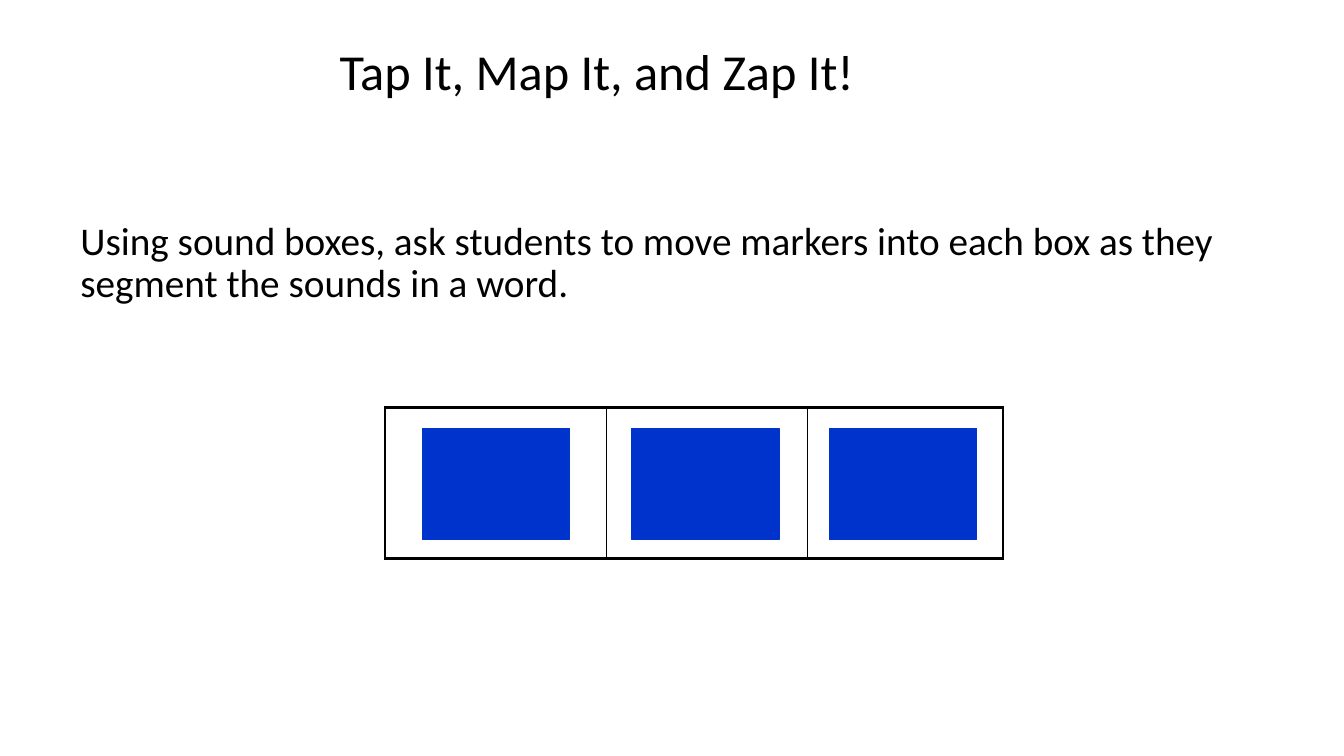
from dataclasses import dataclass

from lxml.etree import SubElement
from pptx import Presentation
from pptx.dml.color import RGBColor
from pptx.enum.shapes import MSO_SHAPE as Shape
from pptx.enum.text import MSO_ANCHOR as Anchor, MSO_AUTO_SIZE as AutoSize, PP_ALIGN as Align
from pptx.oxml.ns import qn
from pptx.slide import Slide
from pptx.util import Pt


@dataclass(frozen=True)
class Theme:
    font: str = "Calibri"
    ink: str = "000000"
    marker: str = "0033CC"
    title_size: float = 36
    body_size: float = 28
    outer_border: float = 2.25
    inner_border: float = 1
    marker_border: float = 0.75


@dataclass
class SlideBuilder:
    slide: Slide
    theme: Theme

    def format_text(self, shape, text, size, space_after=0, indent=0):
        frame = shape.text_frame
        frame_format = {"word_wrap": True, "auto_size": AutoSize.NONE, "vertical_anchor": Anchor.TOP}
        for name, value in frame_format.items():
            setattr(frame, name, value)
        paragraph = frame.paragraphs[0]
        paragraph_format = {
            "text": text,
            "alignment": Align.LEFT,
            "line_spacing": 0.9,
            "space_before": Pt(0),
            "space_after": Pt(space_after),
        }
        for name, value in paragraph_format.items():
            setattr(paragraph, name, value)
        properties = paragraph._p.get_or_add_pPr()
        properties.set("marL", str(Pt(indent)))
        properties.set("indent", "0")
        font = paragraph.runs[0].font
        for name, value in {"name": self.theme.font, "size": Pt(size)}.items():
            setattr(font, name, value)
        font.color.rgb = RGBColor.from_string(self.theme.ink)

    def title(self, text, left, top, width, height, indent):
        shape = self.slide.shapes.title
        box = {"left": left, "top": top, "width": width, "height": height}
        for name, value in box.items():
            setattr(shape, name, Pt(value))
        self.format_text(shape, text, self.theme.title_size, indent=indent)

    def body(self, text, left, top, width, height, space_after):
        shape = self.slide.shapes.add_textbox(Pt(left), Pt(top), Pt(width), Pt(height))
        self.format_text(shape, text, self.theme.body_size, space_after)

    def border(self, cell, side, width):
        properties = cell._tc.get_or_add_tcPr()
        line = SubElement(properties, qn(f"a:ln{side}"), w=str(Pt(width)))
        fill = SubElement(line, qn("a:solidFill"))
        SubElement(fill, qn("a:srgbClr"), val=self.theme.ink)

    def sound_boxes(self, left, top, widths, height):
        count = len(widths)
        frame = self.slide.shapes.add_table(
            1, count, Pt(left), Pt(top), Pt(sum(widths)), Pt(height)
        )
        table = frame.table
        for name in ("first_row", "horz_banding"):
            setattr(table, name, False)
        table.rows[0].height = Pt(height)
        outer, inner = self.theme.outer_border, self.theme.inner_border
        for index, width in enumerate(widths):
            table.columns[index].width = Pt(width)
            cell = table.cell(0, index)
            borders = {
                "L": outer if index == 0 else inner,
                "R": outer if index == count - 1 else inner,
                "T": outer,
                "B": outer,
            }
            for side, weight in borders.items():
                self.border(cell, side, weight)
            cell.fill.background()

    def marker(self, left, top, width, height):
        shape = self.slide.shapes.add_shape(
            Shape.RECTANGLE, Pt(left), Pt(top), Pt(width), Pt(height)
        )
        shape.shadow.inherit = False
        color = RGBColor.from_string(self.theme.marker)
        shape.fill.solid()
        shape.fill.fore_color.rgb = color
        shape.line.color.rgb = color
        shape.line.width = Pt(self.theme.marker_border)


def main():
    presentation = Presentation()
    presentation.slide_width, presentation.slide_height = Pt(960), Pt(540)
    slide = presentation.slides.add_slide(presentation.slide_layouts.get_by_name("Title Only"))
    builder = SlideBuilder(slide, Theme())
    builder.title("Tap It, Map It, and Zap It!", 226.8, 30.2, 721.4, 90, indent=8.6)
    builder.body(
        "Using sound boxes, ask students to move markers into each box as they "
        "segment the sounds in a word.",
        50.4, 154.8, 880.6, 302.4, space_after=16,
    )
    builder.sound_boxes(275, 290.9, (158.4, 143.3, 139.7), 108)
    for left in (301.7, 451.4, 592.6):
        builder.marker(left, 306, 105.1, 79.2)
    presentation.save("out.pptx")


if __name__ == "__main__":
    main()
